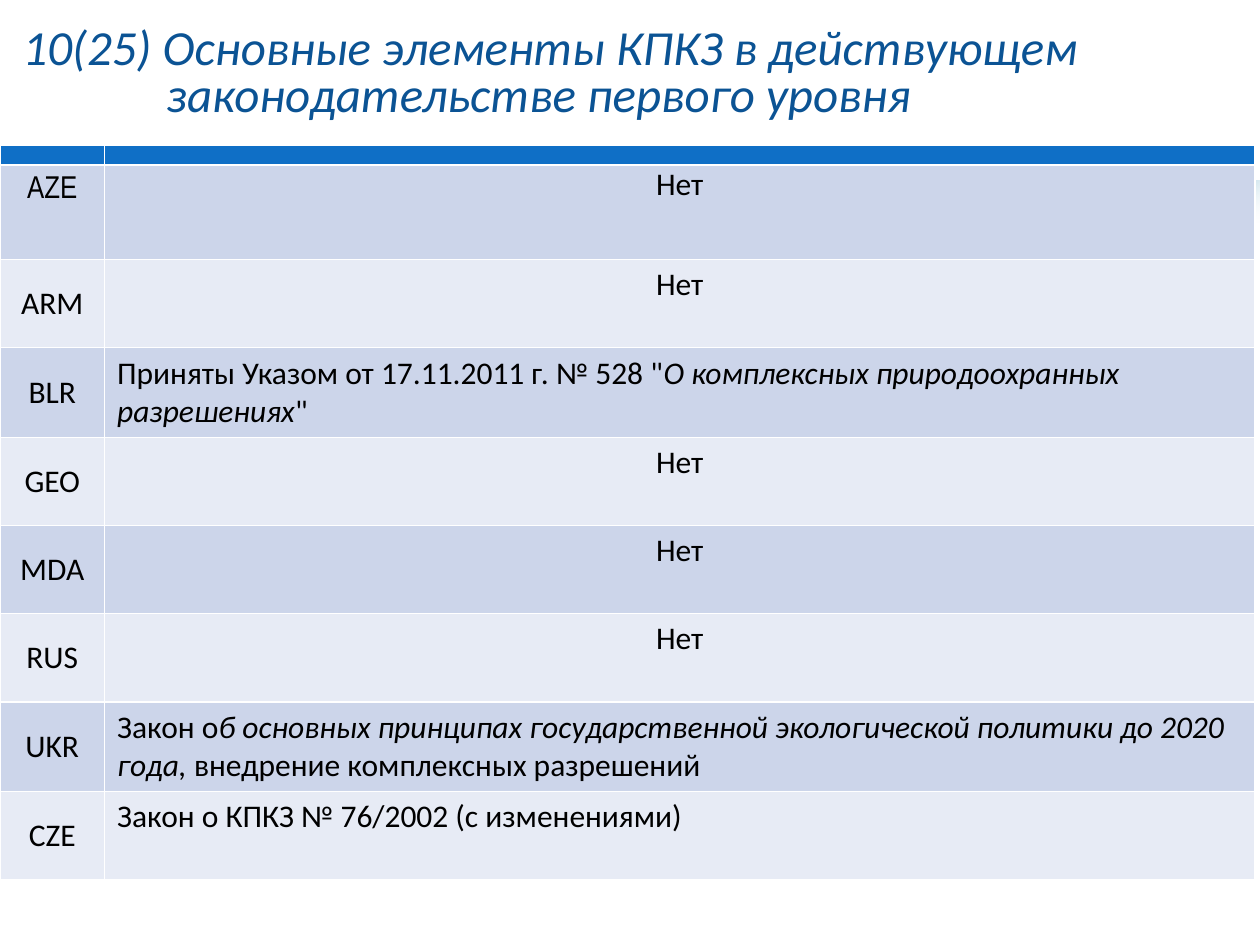
from lxml import etree
from pptx import Presentation
from pptx.dml.color import RGBColor
from pptx.enum.shapes import MSO_SHAPE as SHAPE
from pptx.enum.text import MSO_ANCHOR as ANCHOR, PP_ALIGN as ALIGN
from pptx.oxml import parse_xml
from pptx.oxml.ns import nsdecls, qn
from pptx.util import Inches, Pt

COLORS = {"title": "0B5394", "text": "000000", "header": "0F6FC6",
          "odd": "CCD5EA", "even": "E7EBF5", "white": "FFFFFF", "shadow": "0076A3"}
TITLE = "10(25) Основные элементы КПКЗ в\u00a0действующем\vзаконодательстве первого уровня"
NONE = [("Нет", False)]
COUNTRIES = [
    ("AZE", NONE),
    ("ARM", NONE),
    ("BLR", [('Приняты Указом от 17.11.2011 г. № 528 "', False),
             ("О\u00a0комплексных природоохранных разрешениях", True),
             ('"', False)]),
    ("GEO", NONE),
    ("MDA", NONE),
    ("RUS", NONE),
    ("UKR", [("Закон о", False),
             ("б основных принципах государственной экологической политики до 2020 года, ", True),
             ("внедрение комплексных разрешений", False)]),
    ("CZE", [("Закон о КПКЗ №\u00a076/2002 (с\u00a0изменениями)", False)]),
]
COL_WIDTHS = [0.83, 9.13]
ROW_HEIGHTS = [0.16, 0.75] + [0.7] * (len(COUNTRIES) - 1)


def rgb(name):
    return RGBColor.from_string(COLORS[name])


def style(font, size, color, name="Calibri", italic=False):
    font.size, font.name, font.italic = Pt(size), name, italic
    font.color.rgb = rgb(color)


def set_margins(cell, left, top, right, bottom):
    cell.margin_left, cell.margin_top = Inches(left), Inches(top)
    cell.margin_right, cell.margin_bottom = Inches(right), Inches(bottom)


def fill_cell(cell, color):
    cell.fill.solid()
    cell.fill.fore_color.rgb = rgb(color)


def write_cell(cell, runs, align, font="Calibri"):
    p = cell.text_frame.paragraphs[0]
    p.alignment = align
    for text, italic in runs:
        r = p.add_run()
        r.text = text
        style(r.font, 18, "text", font, italic)


def add_banner(s):
    sp = s.shapes.add_shape(SHAPE.FLOWCHART_DOCUMENT, 0, 0, Inches(10), Inches(1.78))
    sp.fill.solid()
    sp.fill.fore_color.rgb = rgb("white")
    sp.line.fill.background()
    sp.shadow.inherit = False
    effects = sp._element.spPr.find(qn("a:effectLst"))
    effects.append(parse_xml(
        f'<a:outerShdw {nsdecls("a")} blurRad="{Pt(22)}" dist="{Pt(3)}" dir="5400000" '
        f'rotWithShape="0"><a:srgbClr val="{COLORS["shadow"]}">'
        '<a:alpha val="40000"/></a:srgbClr></a:outerShdw>'))
    s.shapes._spTree.insert(2, sp._element)


def add_title(s):
    sp = s.shapes.title
    sp.left, sp.top, sp.width, sp.height = map(Inches, (0.08, 0.13, 9.88, 0.93))
    tf = sp.text_frame
    tf.text = TITLE
    tf.word_wrap = True
    tf.vertical_anchor = ANCHOR.MIDDLE
    p = tf.paragraphs[0]
    p.alignment, p.line_spacing = ALIGN.LEFT, 0.8
    pPr = p._p.get_or_add_pPr()
    pPr.set("marL", str(Inches(1.14)))
    pPr.set("indent", str(-Inches(1.14)))
    for r in p.runs:
        style(r.font, 28, "title", italic=True)


def add_country_table(s):
    table = s.shapes.add_table(len(ROW_HEIGHTS), len(COL_WIDTHS), 0, Inches(1.15),
                               Inches(sum(COL_WIDTHS)), Inches(sum(ROW_HEIGHTS))).table
    for col, width in zip(table.columns, COL_WIDTHS):
        col.width = Inches(width)
    for row, height in zip(table.rows, ROW_HEIGHTS):
        row.height = Inches(height)
    for cell in table.rows[0].cells:
        fill_cell(cell, "header")
        set_margins(cell, 0.1, 0, 0.1, 0)
        end = etree.SubElement(cell.text_frame.paragraphs[0]._p, qn("a:endParaRPr"))
        end.set("sz", "800")
    for i, (code, runs) in enumerate(COUNTRIES, 1):
        label, detail = table.rows[i].cells
        for cell in (label, detail):
            fill_cell(cell, "odd" if i % 2 else "even")
        label.vertical_anchor = ANCHOR.MIDDLE
        write_cell(label, [(code, False)], ALIGN.CENTER, "Arial Narrow" if i == 1 else "Calibri")
        write_cell(detail, runs, ALIGN.CENTER if runs is NONE else ALIGN.LEFT)
    first_label, first_detail = table.rows[1].cells
    set_margins(first_label, 0.1, 0.05, 0.1, 0.4)
    set_margins(first_detail, 0.02, 0, 0.02, 0)


def main():
    prs = Presentation()
    prs.slide_width, prs.slide_height = Inches(10), Inches(7.5)
    s = prs.slides.add_slide(prs.slide_layouts[5])
    add_banner(s)
    add_title(s)
    add_country_table(s)
    prs.save("out.pptx")


if __name__ == "__main__":
    main()
